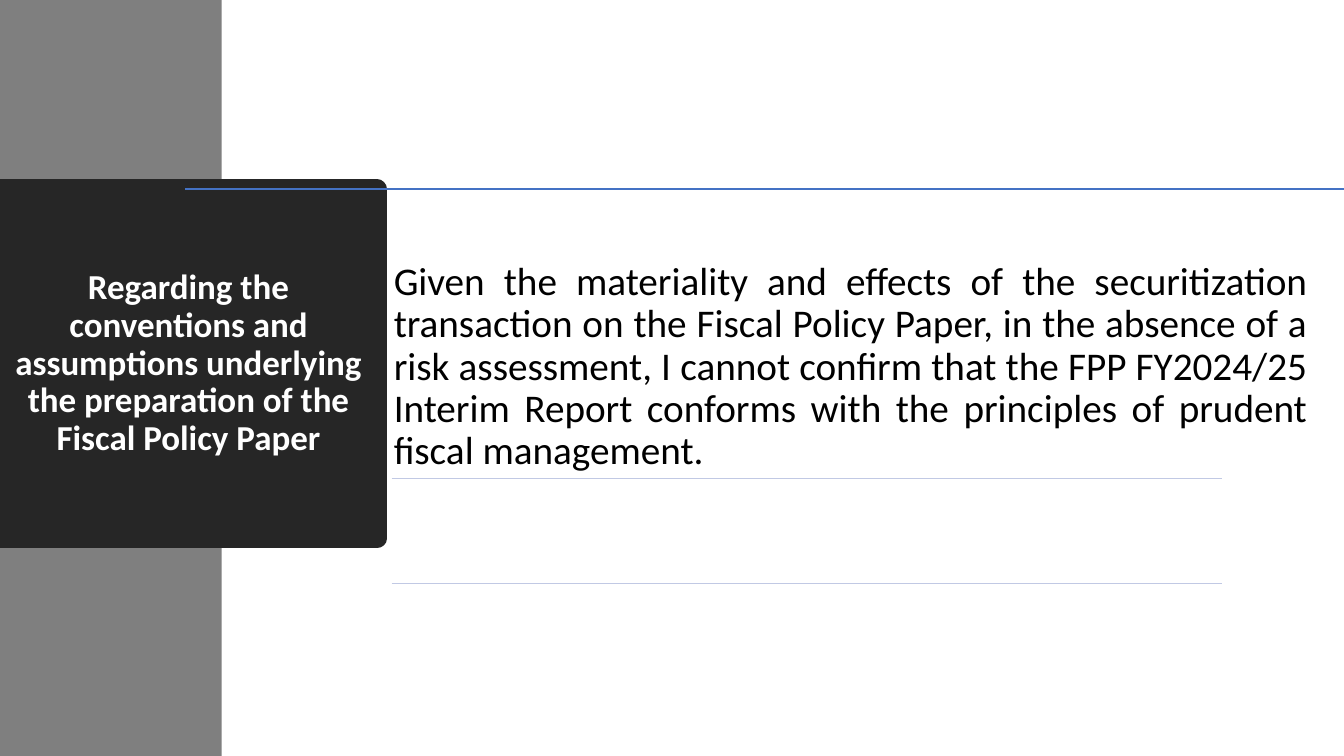
from lxml.etree import SubElement
from pptx import Presentation
from pptx.dml.color import RGBColor
from pptx.enum.shapes import MSO_CONNECTOR, MSO_SHAPE
from pptx.enum.text import MSO_ANCHOR, MSO_AUTO_SIZE, PP_ALIGN
from pptx.oxml.ns import qn
from pptx.util import Pt

PX = 9525
GREY = RGBColor(0x7F, 0x7F, 0x7F)
DARK = RGBColor(0x26, 0x26, 0x26)
BLUE = RGBColor(0x44, 0x72, 0xC4)
PALE = RGBColor(0xC1, 0xC9, 0xE4)
WHITE = RGBColor(0xFF, 0xFF, 0xFF)
BLACK = RGBColor(0x00, 0x00, 0x00)


class Deck:
    """Holds the slide, its scale and its text style."""

    def __init__(self, wide, high):
        self.prs = Presentation()
        self.prs.slide_width, self.prs.slide_height = wide * PX, high * PX
        self.slide = self.prs.slides.add_slide(self.prs.slide_layouts[1])
        self.face = "Calibri"

    def band(self, box, color):
        shape = self.slide.shapes.add_shape(
            MSO_SHAPE.RECTANGLE, *[n * PX for n in box])
        shape.shadow.inherit = False
        shape.fill.solid()
        shape.fill.fore_color.rgb = color
        shape.line.fill.background()
        shape.element.getparent().insert(2, shape.element)

    def text(self, slot, box, words, size, color, bold, align, anchor, inset):
        shape = self.slide.placeholders[slot]
        shape.left, shape.top, shape.width, shape.height = [n * PX for n in box]
        frame = shape.text_frame
        style = {"word_wrap": True, "auto_size": MSO_AUTO_SIZE.NONE,
                 "vertical_anchor": anchor}
        for side in ("left", "top", "right", "bottom"):
            style["margin_" + side] = inset * PX
        for name, value in style.items():
            setattr(frame, name, value)
        frame.text = words
        para = frame.paragraphs[0]
        props = para._p.get_or_add_pPr()
        props.set("marL", "0")
        props.set("indent", "0")
        SubElement(props, qn("a:buNone"))
        for name, value in {"alignment": align, "line_spacing": 0.9,
                            "space_before": Pt(0)}.items():
            setattr(para, name, value)
        font = para.runs[0].font
        for name, value in {"name": self.face, "size": Pt(size),
                            "bold": bold}.items():
            setattr(font, name, value)
        font.color.rgb = color
        return shape

    def panel(self, shape, color, width):
        shape.fill.solid()
        shape.fill.fore_color.rgb = color
        shape.line.color.rgb = color
        shape.line.width = Pt(width)
        SubElement(shape.line._get_or_add_ln(), qn("a:round"))

    def rule(self, left, right, top, color):
        line = self.slide.shapes.add_connector(
            MSO_CONNECTOR.STRAIGHT, left * PX, top * PX, right * PX, top * PX)
        line.line.color.rgb = color
        line.line.width = Pt(1)
        SubElement(line.element.spPr, qn("a:effectLst"))


def main():
    deck = Deck(1280, 720)
    deck.band((0, 0, 211, 720), GREY)
    title = deck.text(
        0, (0, 180, 359, 333),
        "Regarding the conventions and assumptions underlying "
        "the preparation of the Fiscal Policy Paper",
        25, WHITE, True, PP_ALIGN.CENTER, MSO_ANCHOR.MIDDLE, 10)
    deck.panel(title, DARK, 13.75)
    deck.text(
        1, (364, 238, 892, 268),
        "Given the materiality and effects of the securitization transaction "
        "on the Fiscal Policy Paper, in the absence of a risk assessment, "
        "I cannot confirm that the FPP FY2024/25 Interim Report conforms with "
        "the principles of prudent fiscal management.",
        28, BLACK, False, PP_ALIGN.JUSTIFY, MSO_ANCHOR.TOP, 11)
    deck.rule(176, 1280, 180, BLUE)
    for top in (456, 556):
        deck.rule(373, 1164, top, PALE)
    deck.prs.save("out.pptx")


if __name__ == "__main__":
    main()
